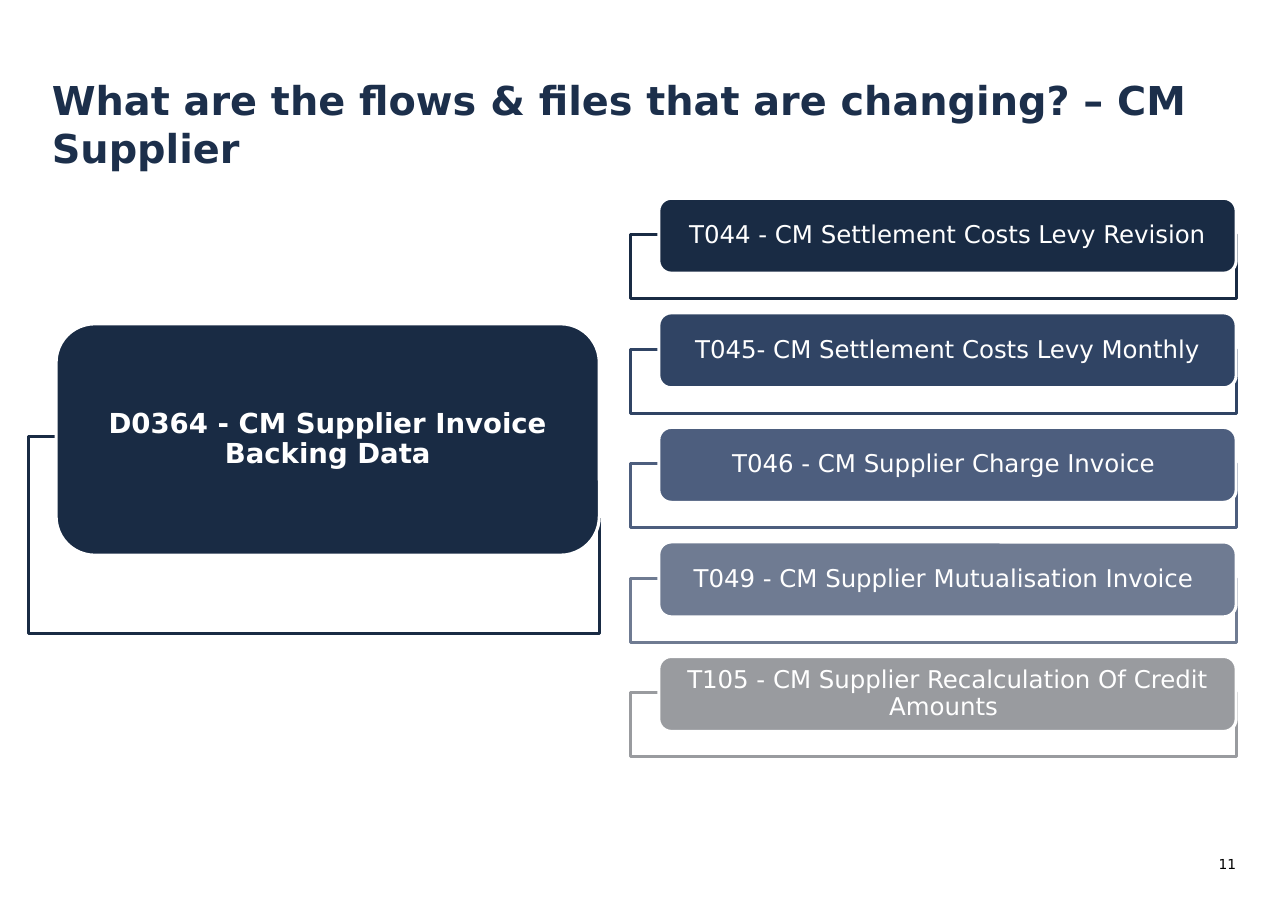
from lxml import etree
from pptx import Presentation
from pptx.dml.color import RGBColor
from pptx.enum.shapes import MSO_SHAPE
from pptx.enum.text import MSO_ANCHOR, MSO_AUTO_SIZE, PP_ALIGN
from pptx.oxml.ns import qn
from pptx.util import Inches, Pt

RECT, ROUND = MSO_SHAPE.RECTANGLE, MSO_SHAPE.ROUNDED_RECTANGLE
TOP, MIDDLE = MSO_ANCHOR.TOP, MSO_ANCHOR.MIDDLE
LEFT, CENTER, RIGHT = PP_ALIGN.LEFT, PP_ALIGN.CENTER, PP_ALIGN.RIGHT
NO_FIT = MSO_AUTO_SIZE.NONE

FONT = "DejaVu Sans"
WHITE = RGBColor(0xFF, 0xFF, 0xFF)
BLACK = RGBColor(0, 0, 0)
INK = RGBColor(0x1C, 0x2F, 0x4B)
NAVY = RGBColor(0x19, 0x2B, 0x44)
BLUE = RGBColor(0x30, 0x44, 0x64)
SLATE = RGBColor(0x4D, 0x5E, 0x7E)
STEEL = RGBColor(0x6F, 0x7B, 0x92)
GREY = RGBColor(0x99, 0x9B, 0x9F)

WIDE, HIGH = 11.69, 8.27
EDGE = 11.22
ROW_TOP, PITCH = 1.8, 1.04
FILES = [
    ("T044 - CM Settlement Costs Levy Revision", NAVY),
    ("T045- CM Settlement Costs Levy Monthly", BLUE),
    ("T046 - CM Supplier Charge Invoice ", SLATE),
    ("T049 - CM Supplier Mutualisation Invoice ", STEEL),
    ("T105 - CM Supplier Recalculation Of Credit Amounts ", GREY),
]


def inches(box):
    """Turn a left, top, width, height box into lengths."""
    return [Inches(side) for side in box]


def write(shape, text, size, color, bold=False, align=LEFT, anchor=TOP, pad=0):
    """Write one styled run into a shape and return its paragraph."""
    frame = shape.text_frame
    frame.word_wrap = True
    frame.auto_size = NO_FIT
    frame.vertical_anchor = anchor
    frame.margin_left = frame.margin_right = Inches(pad)
    frame.margin_top = frame.margin_bottom = 0
    para = frame.paragraphs[0]
    para.alignment = align
    run = para.add_run()
    run.text = text
    font = run.font
    font.name, font.size, font.bold = FONT, Pt(size), bold
    font.color.rgb = color
    return para


def add_block(slide, kind, box, fill, line):
    """Add a filled and outlined shape without a shadow."""
    shape = slide.shapes.add_shape(kind, *inches(box))
    shape.shadow.inherit = False
    shape.fill.solid()
    shape.fill.fore_color.rgb = fill
    shape.line.color.rgb = line
    shape.line.width = Pt(2)
    return shape


def add_frame(slide, box, color):
    """Add an outlined frame with a nearly opaque white fill."""
    frame = add_block(slide, RECT, box, WHITE, color)
    tint = frame.fill._xPr.find(qn("a:solidFill"))[0]
    etree.SubElement(tint, qn("a:alpha")).set("val", "90000")


def add_card(slide, box, color, text, size, bold=False):
    """Add a rounded card with centred white text."""
    card = add_block(slide, ROUND, box, color, WHITE)
    para = write(card, text, size, WHITE, bold, CENTER, MIDDLE, 0.15)
    para.line_spacing = 0.9


def add_title(slide, text):
    """Place and format the title."""
    title = slide.shapes.title
    title.left, title.top, title.width, title.height = inches(
        (0.47, 0.69, 10.75, 0.47))
    write(title, text, 26, INK, True)


def add_number(slide, text):
    """Add the page number at the lower right."""
    box = slide.shapes.add_textbox(*inches((EDGE - 0.39, 7.77, 0.39, 0.2)))
    write(box, text, 9, BLACK, align=RIGHT)


def main():
    """Build the slide and save it."""
    deck = Presentation()
    deck.slide_width, deck.slide_height = Inches(WIDE), Inches(HIGH)
    slide = deck.slides.add_slide(deck.slide_layouts[5])
    add_title(slide, "What are the flows & files that are changing? – CM Supplier")
    add_frame(slide, (0.26, 3.96, 5.18, 1.79), NAVY)
    add_card(slide, (0.51, 2.94, 4.93, 2.1), NAVY,
             "D0364 - CM Supplier Invoice Backing Data", 18, True)
    for row, (text, color) in enumerate(FILES):
        top = ROW_TOP + row * PITCH
        add_frame(slide, (5.72, top + 0.33, 5.5, 0.58), color)
        add_card(slide, (5.98, top, 5.24, 0.68), color, text, 16)
    add_number(slide, "11")
    deck.save("out.pptx")


if __name__ == "__main__":
    main()
